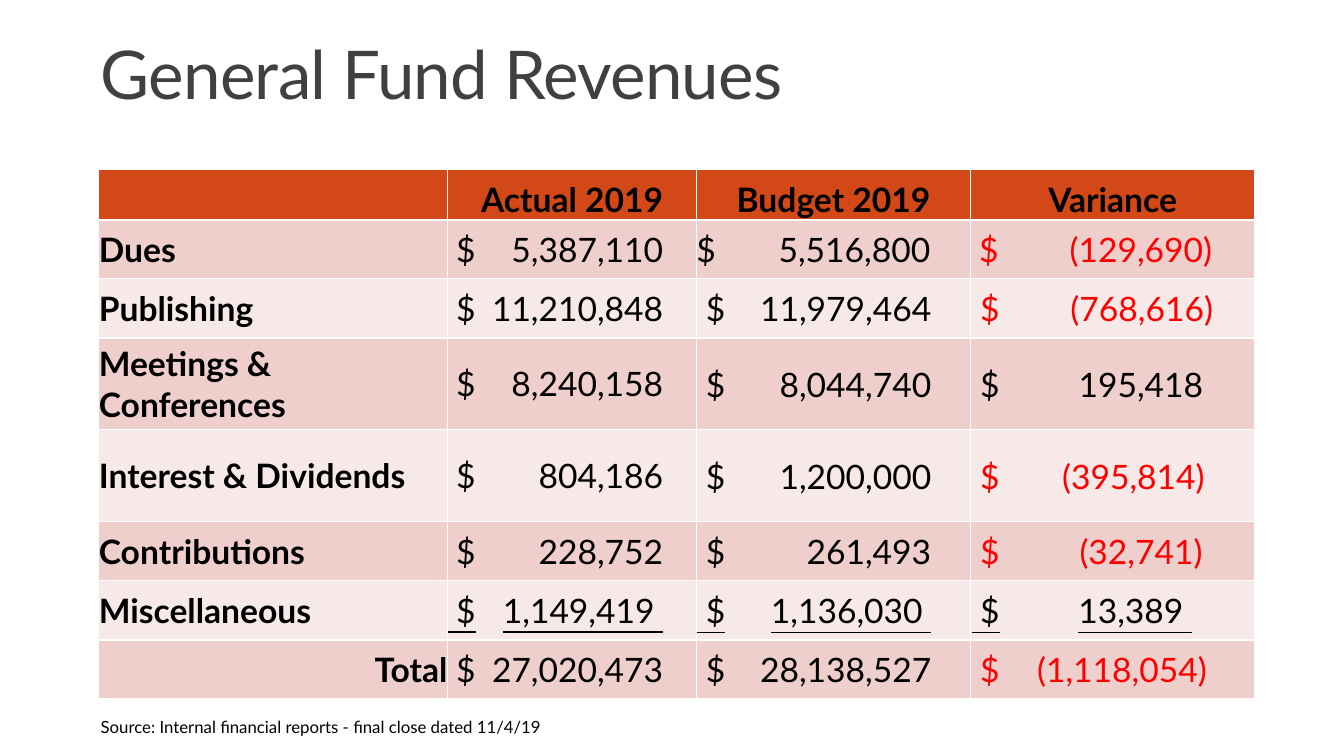
import dataclasses

import lxml.etree
import pptx
import pptx.dml.color
import pptx.enum.text
import pptx.oxml.ns
import pptx.slide
import pptx.table
import pptx.text.text
import pptx.util

Pt = pptx.util.Pt
Align = pptx.enum.text.PP_ALIGN
Anchor = pptx.enum.text.MSO_ANCHOR
Fit = pptx.enum.text.MSO_AUTO_SIZE
qn = pptx.oxml.ns.qn


@dataclasses.dataclass(frozen=True)
class Theme:
    font: str = "Lato"
    title: str = "404040"
    ink: str = "000000"
    loss: str = "FF0000"
    head: str = "D34817"
    bands: tuple[str, str] = ("EFCFCC", "F7E9E7")
    rule: str = "FFFFFF"
    title_size: float = 48
    cell_size: float = 24
    note_size: float = 12


@dataclasses.dataclass(frozen=True)
class Fund:
    name: str
    actual: str
    budget: str
    gap: str
    gap_stop: float
    height: float = 42.2
    under: bool = False
    budget_lead: str = " "
    align: Align = Align.LEFT


THEME = Theme()
WIDTHS = (249.1, 177.8, 195.8, 203)
HEADS = ("", "Actual 2019", "Budget 2019", "Variance")
HEAD_HEIGHT = 36
ACTUAL_STOP = 154
BUDGET_STOP = 167
FUNDS = (
    Fund("Dues", "5,387,110", "5,516,800", "(129,690)", 172.5, budget_lead=""),
    Fund("Publishing", "11,210,848", "11,979,464", "(768,616)", 172.5),
    Fund("Meetings & Conferences", "8,240,158", "8,044,740", "195,418", 165.5, 65.7),
    Fund("Interest & Dividends", "804,186", "1,200,000", "(395,814)", 166.5, 65.7),
    Fund("Contributions", "228,752", "261,493", "(32,741)", 165),
    Fund("Miscellaneous", "1,149,419", "1,136,030", "13,389", 157.5, under=True),
    Fund("Total", "27,020,473", "28,138,527", "(1,118,054)", 168, align=Align.RIGHT),
)


def tint(code: str) -> pptx.dml.color.RGBColor:
    return pptx.dml.color.RGBColor.from_string(code)


def style(
    para: pptx.text.text._Paragraph, size: float, ink: str,
    bold: bool = False, under: bool = False,
) -> None:
    for run in para.runs:
        run.font.name = THEME.font
        run.font.size = Pt(size)
        run.font.color.rgb = tint(ink)
        run.font.bold = bold
        run.font.underline = under


def paint(cell: pptx.table._Cell, fill: str, top: float = 1, base: float = 1) -> None:
    props = cell._tc.get_or_add_tcPr()
    for side, width in (("L", 1), ("R", 1), ("T", top), ("B", base)):
        line = lxml.etree.SubElement(props, qn(f"a:ln{side}"), w=str(Pt(width)))
        solid = lxml.etree.SubElement(line, qn("a:solidFill"))
        lxml.etree.SubElement(solid, qn("a:srgbClr"), val=THEME.rule)
    cell.fill.solid()
    cell.fill.fore_color.rgb = tint(fill)


def write(
    cell: pptx.table._Cell, text: str, ink: str = THEME.ink, bold: bool = False,
    under: bool = False, align: Align = Align.LEFT, anchor: Anchor = Anchor.MIDDLE,
    stop: float = 0, inset: float = 0,
) -> None:
    cell.margin_left = cell.margin_right = cell.margin_top = Pt(inset)
    cell.margin_bottom = Pt(0)
    cell.vertical_anchor = anchor
    cell.text_frame.text = text
    para = cell.text_frame.paragraphs[0]
    para.alignment = align
    if stop:
        tabs = lxml.etree.SubElement(para._p.get_or_add_pPr(), qn("a:tabLst"))
        lxml.etree.SubElement(tabs, qn("a:tab"), pos=str(Pt(stop)), algn="r")
    style(para, THEME.cell_size, ink, bold, under)


def add_title(slide: pptx.slide.Slide, text: str) -> None:
    title = slide.shapes.title
    title.left, title.top, title.width, title.height = map(Pt, (64.8, 23.8, 832.3, 60.5))
    frame = title.text_frame
    frame.text = text
    frame.auto_size = Fit.NONE
    frame.vertical_anchor = Anchor.BOTTOM
    para = frame.paragraphs[0]
    para.alignment = Align.LEFT
    para.line_spacing = 0.85
    style(para, THEME.title_size, THEME.title)
    para.runs[0]._r.get_or_add_rPr().set("spc", "-50")


def add_funds(slide: pptx.slide.Slide) -> None:
    heights = (HEAD_HEIGHT, *(fund.height for fund in FUNDS))
    table = slide.shapes.add_table(
        len(heights), len(WIDTHS), Pt(70.6), Pt(121),
        Pt(sum(WIDTHS)), Pt(sum(heights)),
    ).table
    table.horz_banding = False
    for col, width in zip(table.columns, WIDTHS):
        col.width = Pt(width)
    for row, height in zip(table.rows, heights):
        row.height = Pt(height)

    for col, head in enumerate(HEADS):
        cell = table.cell(0, col)
        paint(cell, THEME.head, base=1.5)
        write(cell, head, bold=True, under=True, align=Align.CENTER, anchor=Anchor.BOTTOM)

    for row, fund in enumerate(FUNDS, 1):
        for col in range(len(WIDTHS)):
            paint(table.cell(row, col), THEME.bands[(row - 1) % 2], top=1.5 if row == 1 else 1)
        write(table.cell(row, 0), fund.name, bold=True, align=fund.align)
        sums = (
            (" ", fund.actual, ACTUAL_STOP),
            (fund.budget_lead, fund.budget, BUDGET_STOP),
            (" ", fund.gap, fund.gap_stop),
        )
        tail = " " if fund.under else ""
        for col, (lead, value, stop) in enumerate(sums, 1):
            write(
                table.cell(row, col), f"{lead}$\t{value}{tail}",
                ink=THEME.loss if value.startswith("(") else THEME.ink,
                under=fund.under, stop=stop,
                inset=0.7 if row > 1 and col > 1 else 0,
            )


def add_note(slide: pptx.slide.Slide, text: str) -> None:
    box = slide.shapes.add_textbox(Pt(64.8), Pt(508.3), Pt(392.4), Pt(21.6))
    frame = box.text_frame
    frame.word_wrap = True
    frame.auto_size = Fit.SHAPE_TO_FIT_TEXT
    frame.text = text
    style(frame.paragraphs[0], THEME.note_size, THEME.ink)


def main() -> None:
    deck = pptx.Presentation()
    deck.slide_width, deck.slide_height = Pt(960), Pt(540)
    slide = deck.slides.add_slide(deck.slide_layouts[5])
    add_title(slide, "General Fund Revenues")
    add_funds(slide)
    add_note(slide, "Source: Internal financial reports - final close dated 11/4/19")
    deck.save("out.pptx")


if __name__ == "__main__":
    main()
